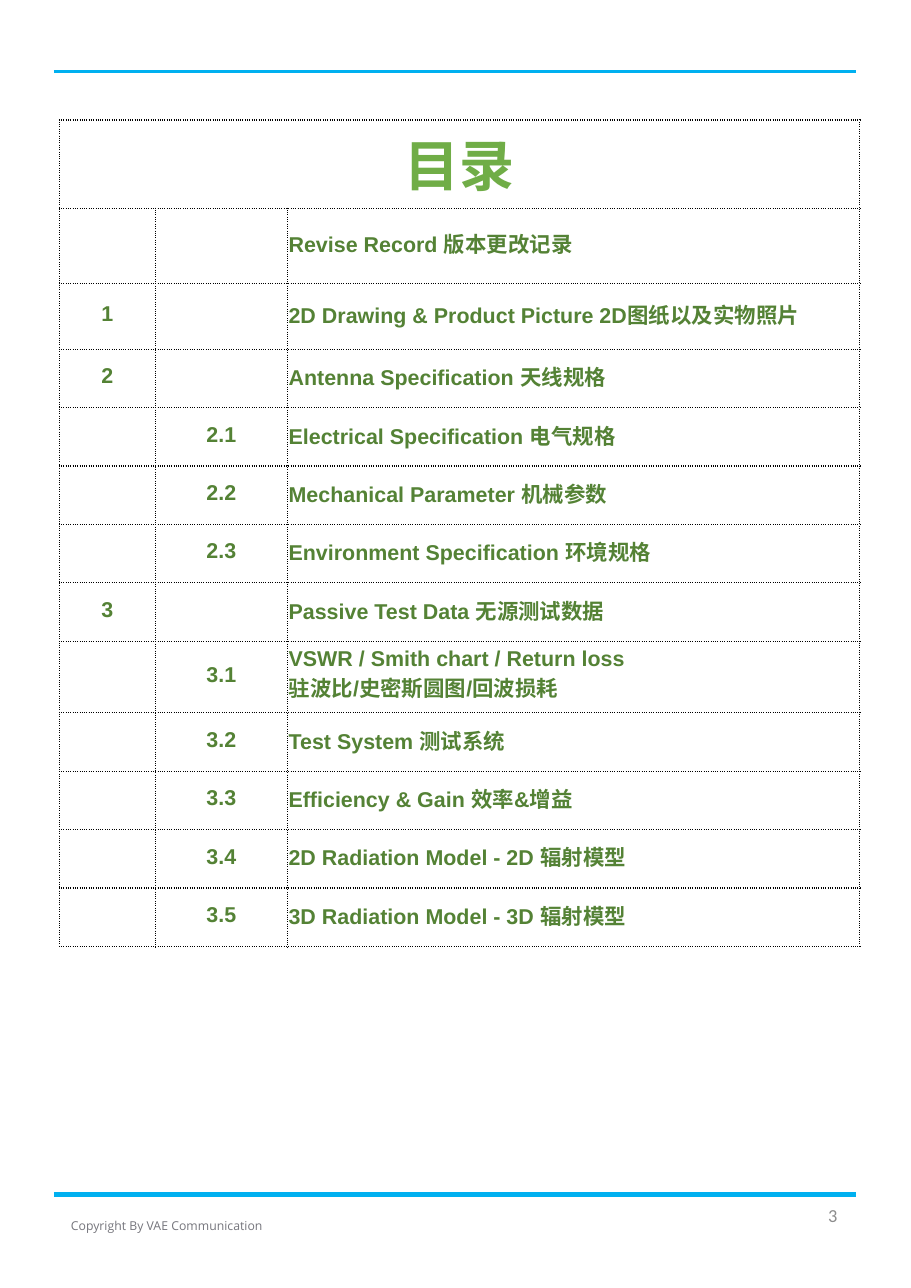
from dataclasses import dataclass

from lxml import etree
from pptx import Presentation
from pptx.dml.color import RGBColor
from pptx.enum.shapes import MSO_CONNECTOR
from pptx.enum.text import MSO_ANCHOR, PP_ALIGN
from pptx.oxml.ns import qn
from pptx.util import Inches, Pt

STRAIGHT = MSO_CONNECTOR.STRAIGHT
MIDDLE = MSO_ANCHOR.MIDDLE
LEFT, CENTER, RIGHT = PP_ALIGN.LEFT, PP_ALIGN.CENTER, PP_ALIGN.RIGHT
CJK = "Noto Sans CJK SC"


@dataclass
class Style:
    font: str
    size: float
    color: str
    bold: bool = False


@dataclass
class Rule:
    top: float
    width: float


@dataclass
class Label:
    text: str
    left: float
    top: float
    width: float
    align: PP_ALIGN
    style: Style


@dataclass
class Entry:
    major: str
    minor: str
    title: str
    height: float = 0.53


TITLE = Style(CJK, 36, "70AD47", True)
BODY = Style("Arial", 14, "548235", True)

RULES = [Rule(0.65, 1.5), Rule(10.84, 3)]
LABELS = [
    Label("3", 5.94, 10.84, 1.76, RIGHT, Style("Calibri", 12, "8C8C8C")),
    Label("Copyright By VAE Communication", 0.34, 10.93, 2.35, CENTER,
          Style("Open Sans", 8, "75757C")),
]
COLS = [0.87, 1.2, 5.19]
HEAD = 0.8
ENTRIES = [
    Entry("", "", "Revise Record 版本更改记录", 0.68),
    Entry("1", "", "2D Drawing & Product Picture 2D图纸以及实物照片", 0.6),
    Entry("2", "", "Antenna Specification 天线规格"),
    Entry("", "2.1", "Electrical Specification 电气规格"),
    Entry("", "2.2", "Mechanical Parameter 机械参数"),
    Entry("", "2.3", "Environment Specification 环境规格"),
    Entry("3", "", "Passive Test Data 无源测试数据"),
    Entry("", "3.1", "VSWR / Smith chart / Return loss\n驻波比/史密斯圆图/回波损耗", 0.65),
    Entry("", "3.2", "Test System 测试系统"),
    Entry("", "3.3", "Efficiency & Gain 效率&增益"),
    Entry("", "3.4", "2D Radiation Model - 2D 辐射模型"),
    Entry("", "3.5", "3D Radiation Model - 3D 辐射模型"),
]


def paint(code: str) -> RGBColor:
    return RGBColor.from_string(code)


def write(frame, text: str, align: PP_ALIGN, style: Style) -> None:
    frame.text = text
    values = {"name": style.font, "size": Pt(style.size), "bold": style.bold}
    for para in frame.paragraphs:
        para.alignment = align
        for run in para.runs:
            for name, value in values.items():
                setattr(run.font, name, value)
            run.font.color.rgb = paint(style.color)
            east = etree.SubElement(run.font._element, qn("a:ea"))
            east.set("typeface", CJK)


def draw_rule(slide, rule: Rule) -> None:
    y = Inches(rule.top)
    line = slide.shapes.add_connector(STRAIGHT, Inches(0.49), y, Inches(7.77), y)
    line.line.color.rgb = paint("00B0F0")
    line.line.width = Pt(rule.width)
    etree.SubElement(line._element.spPr, qn("a:effectLst"))


def draw_label(slide, label: Label) -> None:
    box = slide.shapes.add_textbox(Inches(label.left), Inches(label.top),
                                   Inches(label.width), Inches(0.38))
    frame = box.text_frame
    frame.word_wrap = True
    frame.vertical_anchor = MIDDLE
    write(frame, label.text, label.align, label.style)


def frame_cell(cell) -> None:
    values = {"margin_left": Inches(0.01), "margin_right": Inches(0.01),
              "margin_top": Inches(0.01), "margin_bottom": Inches(0.05),
              "vertical_anchor": MIDDLE}
    for name, value in values.items():
        setattr(cell, name, value)
    props = cell._tc.get_or_add_tcPr()
    for side in ("lnL", "lnR", "lnT", "lnB"):
        edge = etree.SubElement(props, qn(f"a:{side}"), w=str(Pt(1)))
        fill = etree.SubElement(edge, qn("a:solidFill"))
        etree.SubElement(fill, qn("a:srgbClr"), val="000000")
        etree.SubElement(edge, qn("a:prstDash"), val="sysDot")
    cell.fill.background()


def draw_table(slide) -> None:
    rows = [HEAD] + [entry.height for entry in ENTRIES]
    table = slide.shapes.add_table(len(rows), len(COLS), Inches(0.54), Inches(1.09),
                                   Inches(sum(COLS)), Inches(sum(rows))).table
    table.first_row = table.horz_banding = False
    for col, width in zip(table.columns, COLS):
        col.width = Inches(width)
    for row, height in zip(table.rows, rows):
        row.height = Inches(height)
        for cell in row.cells:
            frame_cell(cell)
    head = table.cell(0, 0)
    head.merge(table.cell(0, len(COLS) - 1))
    write(head.text_frame, "目录", CENTER, TITLE)
    for r, entry in enumerate(ENTRIES, 1):
        texts = (entry.major, entry.minor, entry.title)
        for c, (text, align) in enumerate(zip(texts, (CENTER, CENTER, LEFT))):
            if text:
                write(table.cell(r, c).text_frame, text, align, BODY)


def main() -> None:
    deck = Presentation()
    deck.slide_width, deck.slide_height = Inches(8.27), Inches(11.69)
    slide = deck.slides.add_slide(deck.slide_layouts[6])
    for rule in RULES:
        draw_rule(slide, rule)
    for label in LABELS:
        draw_label(slide, label)
    draw_table(slide)
    deck.save("out.pptx")


if __name__ == "__main__":
    main()
